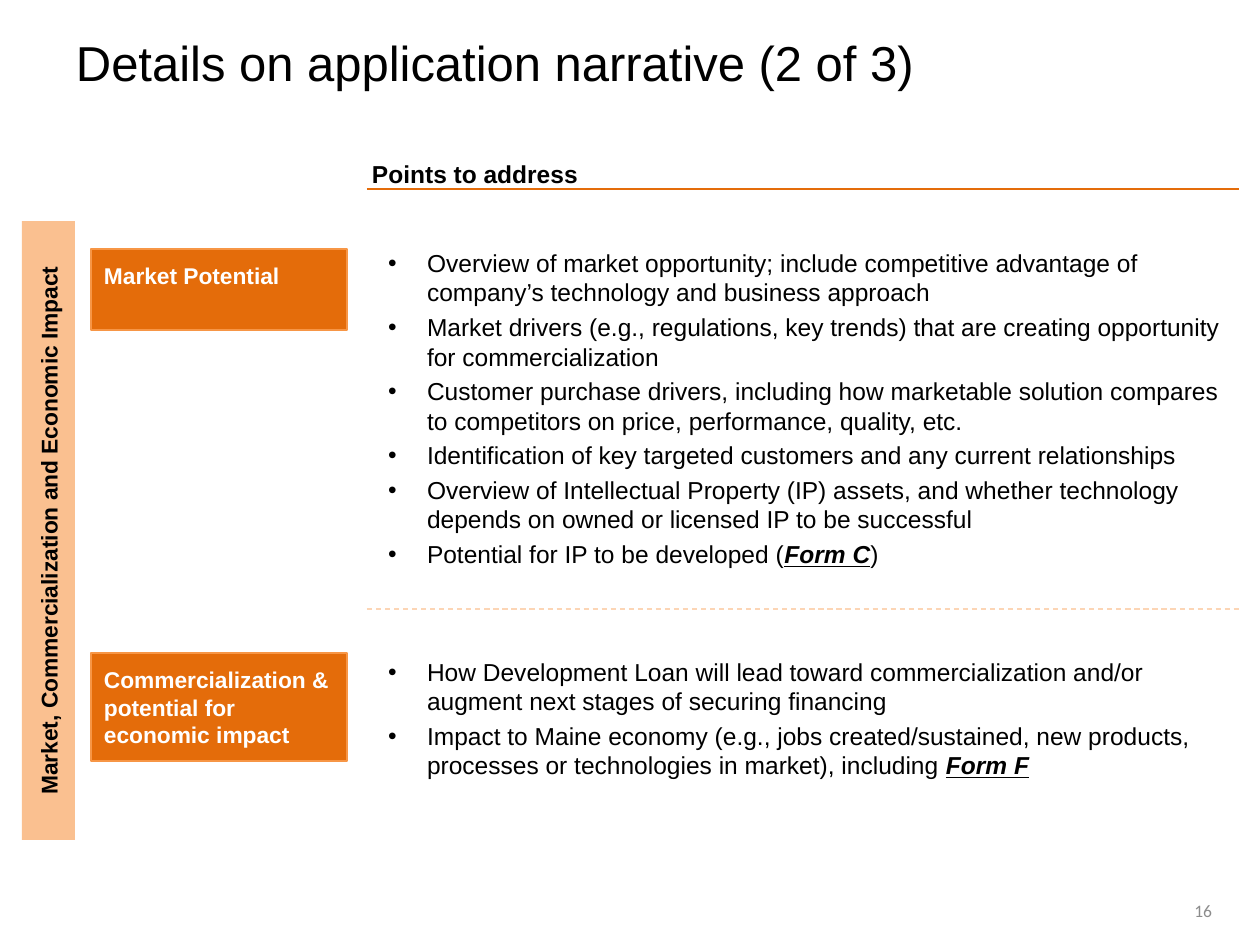
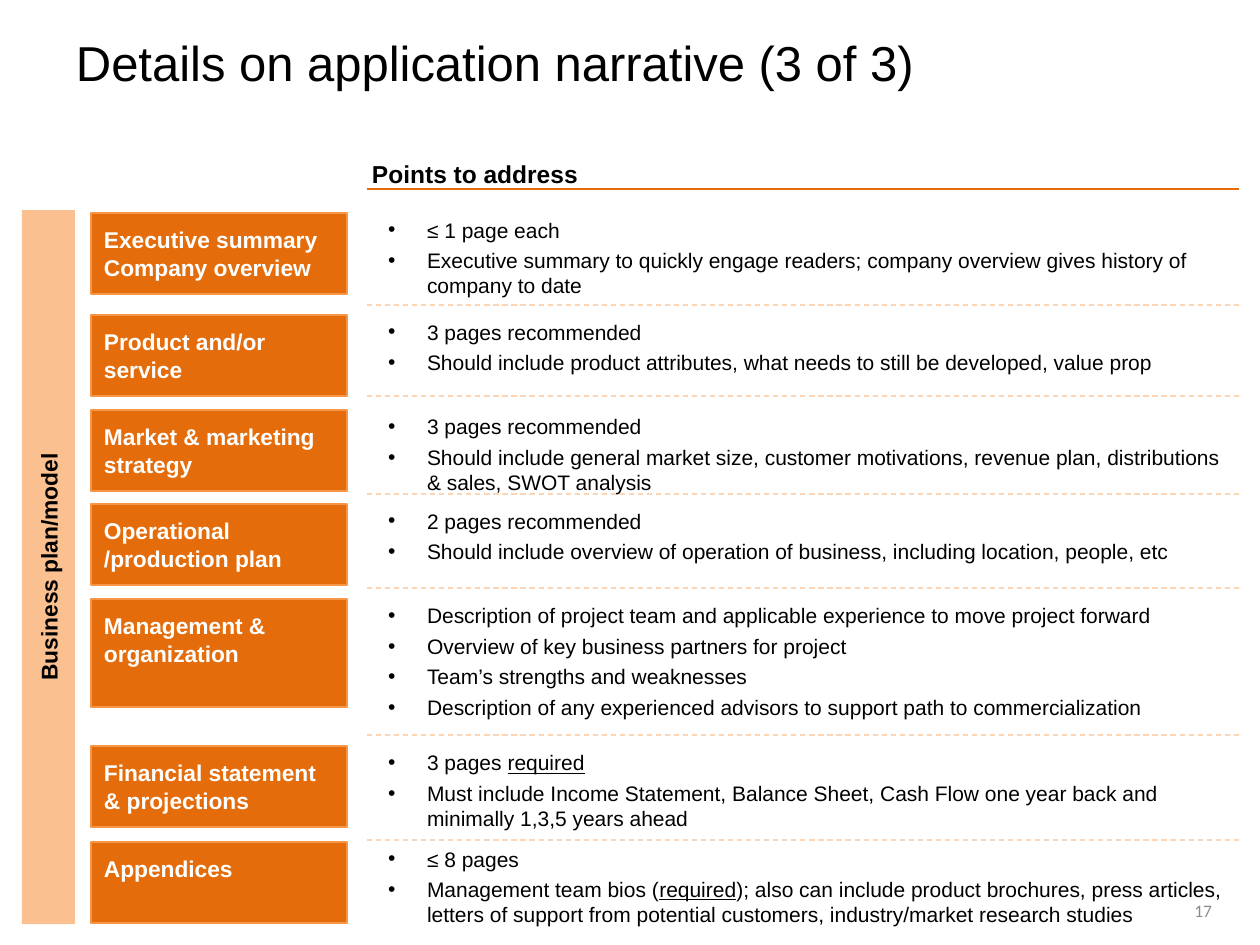
from lxml import etree
from pptx import Presentation
from pptx.dml.color import RGBColor
from pptx.enum.dml import MSO_LINE
from pptx.enum.shapes import MSO_CONNECTOR, MSO_SHAPE
from pptx.enum.text import MSO_ANCHOR, PP_ALIGN
from pptx.oxml.ns import qn
from pptx.util import Pt

PX = 914400 / 126
BLANK_LAYOUT = 6
RECTANGLE = MSO_SHAPE.RECTANGLE
STRAIGHT = MSO_CONNECTOR.STRAIGHT
DASH = MSO_LINE.DASH
TOP, MIDDLE, BOTTOM = MSO_ANCHOR.TOP, MSO_ANCHOR.MIDDLE, MSO_ANCHOR.BOTTOM
LEFT, CENTER, RIGHT = PP_ALIGN.LEFT, PP_ALIGN.CENTER, PP_ALIGN.RIGHT

BLACK = RGBColor(0x00, 0x00, 0x00)
WHITE = RGBColor(0xFF, 0xFF, 0xFF)
GRAY = RGBColor(0x8C, 0x8C, 0x8C)
ORANGE = RGBColor(0xE4, 0x6C, 0x0A)
BRIGHT_ORANGE = RGBColor(0xF7, 0x96, 0x46)
LIGHT_ORANGE = RGBColor(0xFA, 0xC0, 0x90)
PALE_ORANGE = RGBColor(0xFC, 0xD5, 0xB5)

TITLE_FONT = {"name": "Arial", "size": Pt(28), "color": BLACK}
HEADING_FONT = {"name": "Arial", "size": Pt(14), "bold": True, "color": BLACK}
LABEL_FONT = {"name": "Arial", "size": Pt(13), "bold": True, "color": WHITE}
SIDEBAR_FONT = {**LABEL_FONT, "color": BLACK}
NUMBER_FONT = {"name": "Calibri", "size": Pt(10), "color": GRAY}
FORM = {"bold": True, "italic": True, "underline": True}
UNDERLINED = {"underline": True}

# Each row: label, top, label height, points top, points height, points.
# A point is a string, or a list of (text, format) runs.
SLIDES = [
    {
        "title": "Details on application narrative (2 of 3)",
        "number": "16",
        "sidebar": ("Market, Commercialization and Economic Impact", 221, 619),
        "point_size": 14,
        "dividers": [609],
        "rows": [
            ("Market Potential", 249, 81, 244, 358, [
                "Overview of market opportunity; include competitive advantage of "
                "company’s technology and business approach",
                "Market drivers (e.g., regulations, key trends) that are creating "
                "opportunity for commercialization",
                "Customer purchase drivers, including how marketable solution "
                "compares to competitors on price, performance, quality, etc.",
                "Identification of key targeted customers and any current relationships",
                "Overview of Intellectual Property (IP) assets, and whether technology "
                "depends on owned or licensed IP to be successful",
                [("Potential for IP to be developed (", {}), ("Form C", FORM), (")", {})],
            ]),
            ("Commercialization & potential for economic impact", 653, 108, 653, 123, [
                "How Development Loan will lead toward commercialization and/or "
                "augment next stages of securing financing",
                [("Impact to Maine economy (e.g., jobs created/sustained, new products, "
                  "processes or technologies in market), including ", {}),
                 ("Form F", FORM)],
            ]),
        ],
    },
    {
        "title": "Details on application narrative (3 of 3)",
        "number": "17",
        "sidebar": ("Business plan/model", 210, 714),
        "point_size": 12,
        "dividers": [305, 396, 494, 588, 735, 840],
        "rows": [
            ("Executive summary Company overview", 213, 81, 213, 82, [
                "≤ 1 page each",
                "Executive summary to quickly engage readers; company overview gives "
                "history of company to date",
            ]),
            ("Product and/or service", 315, 81, 315, 57, [
                "3 pages recommended",
                "Should include product attributes, what needs to still be developed, "
                "value prop",
            ]),
            ("Market & marketing strategy", 410, 81, 410, 82, [
                "3 pages recommended",
                "Should include general market size, customer motivations, revenue "
                "plan, distributions & sales, SWOT analysis",
            ]),
            ("Operational /production plan", 504, 81, 504, 57, [
                "2 pages recommended",
                "Should include overview of operation of business, including location, "
                "people, etc",
            ]),
            ("Management & organization", 599, 108, 599, 117, [
                "Description of project team and applicable experience to move project "
                "forward",
                "Overview of key business partners for project",
                "Team’s strengths and weaknesses",
                "Description of any experienced advisors to support path to "
                "commercialization",
            ]),
            ("Financial statement & projections", 746, 81, 746, 82, [
                [("3 pages ", {}), ("required", UNDERLINED)],
                "Must include Income Statement, Balance Sheet, Cash Flow one year back "
                "and minimally 1,3,5 years ahead",
            ]),
            ("Appendices", 842, 81, 842, 82, [
                "≤ 8 pages",
                [("Management team bios (", {}), ("required", UNDERLINED),
                 ("); also can include product brochures, press articles, letters of "
                  "support from potential customers, industry/market research studies", {})],
            ]),
        ],
    },
]

LABEL_LEFT, LABEL_WIDTH = 91, 256
POINTS_LEFT, POINTS_WIDTH = 388, 839
RULE_LEFT, RULE_RIGHT, HEADING_RULE_TOP = 367, 1239, 189
SIDEBAR_LEFT, SIDEBAR_WIDTH = 22, 53
BULLET_INDENT = 39
LABEL_INSETS = (13, 13, 13, 13)


def px(value):
    return round(value * PX)


def box(left, top, width, height):
    return [px(value) for value in (left, top, width, height)]


def set_format(font, values):
    for name, value in values.items():
        if name == "color":
            font.color.rgb = value
        else:
            setattr(font, name, value)


def add_bullet(paragraph):
    properties = paragraph._p.get_or_add_pPr()
    properties.set("marL", str(px(BULLET_INDENT)))
    properties.set("indent", str(-px(BULLET_INDENT)))
    etree.SubElement(properties, qn("a:buFont")).set("typeface", "Arial")
    etree.SubElement(properties, qn("a:buChar")).set("char", "•")


def write_text(shape, points, font, insets=(0, 0, 0, 0), anchor=TOP, align=LEFT,
               bulleted=False):
    frame = shape.text_frame
    frame.word_wrap = True
    frame.vertical_anchor = anchor
    for side, inset in zip(("left", "top", "right", "bottom"), insets):
        setattr(frame, f"margin_{side}", px(inset))
    for index, point in enumerate(points):
        paragraph = frame.add_paragraph() if index else frame.paragraphs[0]
        paragraph.alignment = align
        if bulleted:
            add_bullet(paragraph)
        if index:
            paragraph.space_before = Pt(3)
        runs = [(point, {})] if isinstance(point, str) else point
        for text, changes in runs:
            run = paragraph.add_run()
            run.text = text
            set_format(run.font, {**font, **changes})


def add_text(slide, place, points, font, **options):
    write_text(slide.shapes.add_textbox(*box(*place)), points, font, **options)


def add_block(slide, place, text, font, fill, outline=None, align=LEFT):
    shape = slide.shapes.add_shape(RECTANGLE, *box(*place))
    shape.shadow.inherit = False
    shape.fill.solid()
    shape.fill.fore_color.rgb = fill
    if outline is None:
        shape.line.fill.background()
    else:
        shape.line.color.rgb = outline
        shape.line.width = Pt(0.75)
    write_text(shape, [text], font, insets=LABEL_INSETS, align=align)
    return shape


def add_rule(slide, top, color, dash=None):
    rule = slide.shapes.add_connector(
        STRAIGHT, px(RULE_LEFT), px(top), px(RULE_RIGHT), px(top))
    rule.line.color.rgb = color
    rule.line.width = Pt(0.75)
    if dash:
        rule.line.dash_style = dash
    etree.SubElement(rule._element.spPr, qn("a:effectLst"))


def add_sidebar(slide, text, top, length):
    """Add the vertical band, whose text reads upwards."""
    left = SIDEBAR_LEFT + (SIDEBAR_WIDTH - length) / 2
    unturned_top = top + (length - SIDEBAR_WIDTH) / 2
    sidebar = add_block(slide, (left, unturned_top, length, SIDEBAR_WIDTH), text,
                        SIDEBAR_FONT, LIGHT_ORANGE, align=CENTER)
    sidebar.rotation = 270


def add_frame(slide, title, number):
    """Add the parts that every slide shares."""
    add_text(slide, (1134, 898, 95, 25), [number], NUMBER_FONT,
             insets=(13, 6, 17, 6), anchor=MIDDLE, align=RIGHT)
    add_text(slide, (63, 21, 935, 158), [title], TITLE_FONT, insets=(13, 12, 13, 6))
    add_rule(slide, HEADING_RULE_TOP, ORANGE)
    add_text(slide, (372, 158, 839, 30), ["Points to address"], HEADING_FONT,
             anchor=BOTTOM)


def build_slide(presentation, content):
    slide = presentation.slides.add_slide(presentation.slide_layouts[BLANK_LAYOUT])
    add_frame(slide, content["title"], content["number"])
    add_sidebar(slide, *content["sidebar"])
    point_font = {"name": "Arial", "size": Pt(content["point_size"]), "color": BLACK}
    for label, top, height, points_top, points_height, points in content["rows"]:
        add_block(slide, (LABEL_LEFT, top, LABEL_WIDTH, height), label, LABEL_FONT,
                  ORANGE, BRIGHT_ORANGE)
        add_text(slide, (POINTS_LEFT, points_top, POINTS_WIDTH, points_height), points,
                 point_font, insets=(0, 4, 0, 0), bulleted=True)
    for top in content["dividers"]:
        add_rule(slide, top, PALE_ORANGE, DASH)


def main():
    presentation = Presentation()
    presentation.slide_width, presentation.slide_height = px(1260), px(945)
    for content in SLIDES:
        build_slide(presentation, content)
    presentation.save("out.pptx")


if __name__ == "__main__":
    main()
